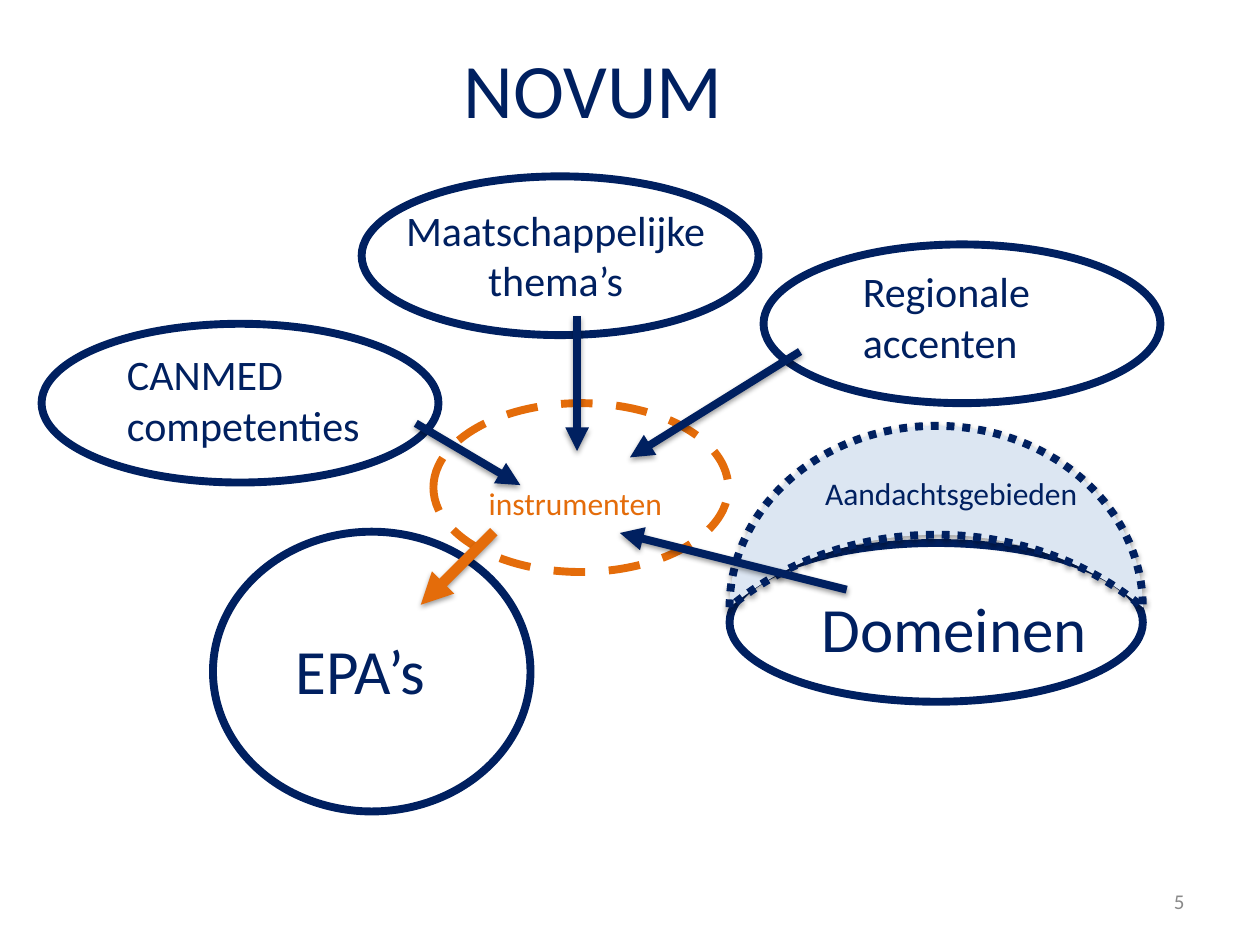
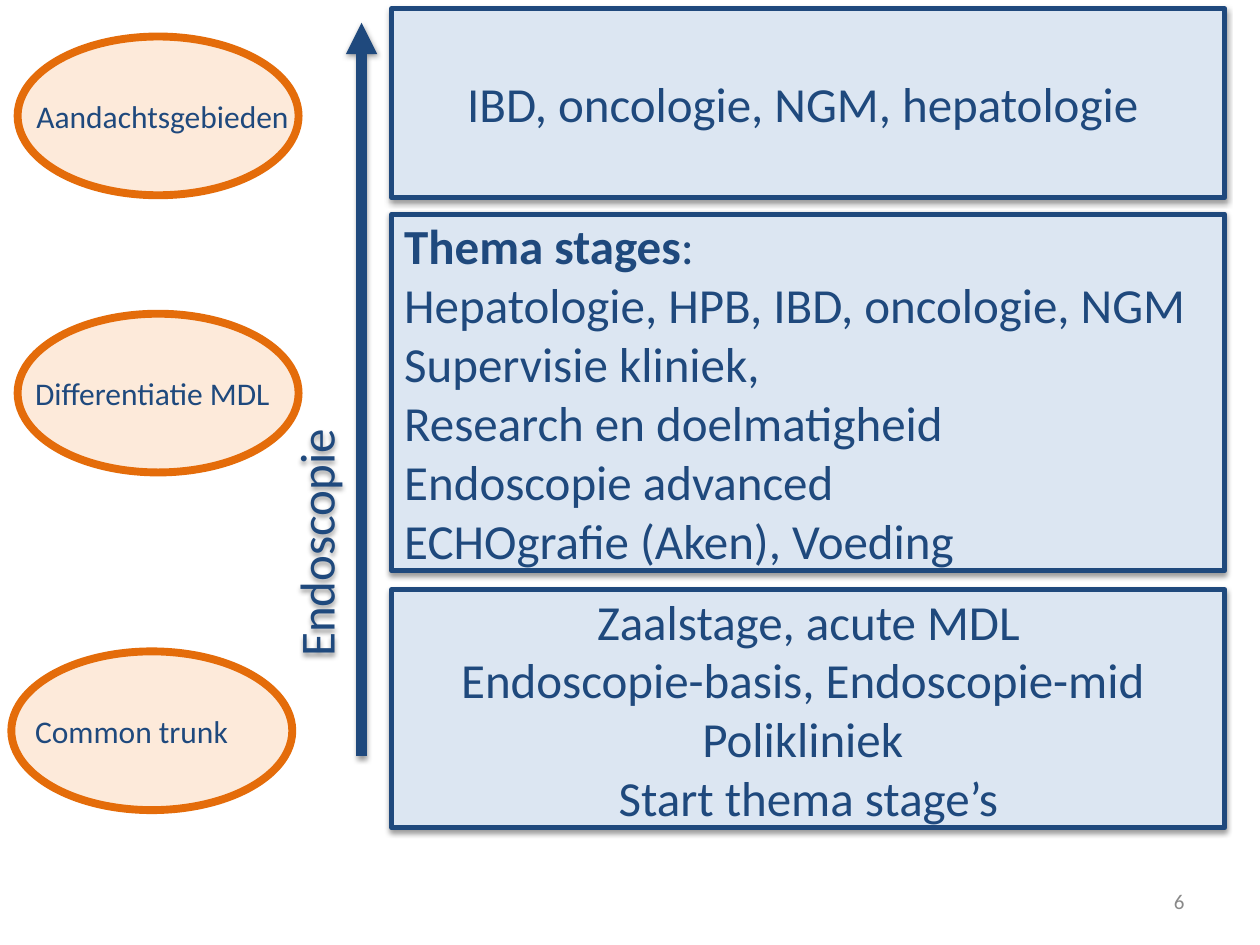
import pptx
import pptx.dml.color
import pptx.enum.dml
import pptx.enum.shapes
import pptx.enum.text
import pptx.oxml.ns
import pptx.util
from lxml import etree

Inches = pptx.util.Inches
Color = pptx.dml.color.RGBColor
Shape = pptx.enum.shapes.MSO_SHAPE
Dash = pptx.enum.dml.MSO_LINE
Align = pptx.enum.text.PP_ALIGN
Anchor = pptx.enum.text.MSO_ANCHOR
qn = pptx.oxml.ns.qn

NAVY = Color(0x00, 0x20, 0x60)
BLUE = Color(0x1F, 0x49, 0x7D)
PALE = Color(0xDC, 0xE6, 0xF2)
ORANGE = Color(0xE4, 0x6C, 0x0A)
PEACH = Color(0xFD, 0xEA, 0xDA)
GREY = Color(0x89, 0x89, 0x89)
FONT = "Calibri"


class Deck:
    """Holds the shared style and the current slide."""

    def __init__(self):
        self.prs = pptx.Presentation()
        self.prs.slide_width = Inches(10)
        self.prs.slide_height = Inches(7.5)
        self.slide = None

    def start(self, number, title=None):
        layout = self.prs.slide_layouts[5 if title else 6]
        self.slide = self.prs.slides.add_slide(layout)
        if title:
            head = self.slide.shapes.title
            self.place(head, (0.21, 0.07, 9, 1.25))
            self.words(head, [title], 44, NAVY, Align.CENTER, Anchor.MIDDLE)
        self.label((7.17, 6.95, 2.33, 0.4), [number], 12, GREY,
                   Align.RIGHT, Anchor.MIDDLE)

    def place(self, shape, box):
        for name, value in zip(("left", "top", "width", "height"), box):
            setattr(shape, name, Inches(value))

    def words(self, shape, lines, size, color, align=Align.LEFT,
              anchor=Anchor.TOP, wrap=True, bold=()):
        frame = shape.text_frame
        frame.word_wrap = wrap
        frame.vertical_anchor = anchor
        look = {"size": pptx.util.Pt(size), "name": FONT}
        for i, line in enumerate(lines):
            para = frame.paragraphs[0] if i == 0 else frame.add_paragraph()
            para.alignment = align
            # A line is a string or a list of runs
            for text in [line] if isinstance(line, str) else line:
                run = para.add_run()
                run.text = text
                for name, value in {**look, "bold": text in bold}.items():
                    setattr(run.font, name, value)
                run.font.color.rgb = color

    def label(self, box, lines, size, color, align=Align.LEFT,
              anchor=Anchor.TOP, wrap=True):
        shape = self.slide.shapes.add_textbox(*map(Inches, box))
        self.words(shape, lines, size, color, align, anchor, wrap)
        return shape

    def shape(self, kind, box, line, width=4.5, fill=None, dash=None):
        shape = self.slide.shapes.add_shape(kind, *map(Inches, box))
        shape.shadow.inherit = False
        if fill is None:
            shape.fill.background()
        else:
            shape.fill.solid()
            shape.fill.fore_color.rgb = fill
        shape.line.color.rgb = line
        shape.line.width = pptx.util.Pt(width)
        if dash:
            shape.line.dash_style = dash
        return shape

    def arrow(self, start, end, color=NAVY, width=4.5):
        line = self.slide.shapes.add_connector(
            pptx.enum.shapes.MSO_CONNECTOR.STRAIGHT,
            *map(Inches, start + end))
        line.line.color.rgb = color
        line.line.width = pptx.util.Pt(width)
        ln = line.element.spPr.find(qn("a:ln"))
        etree.SubElement(ln, qn("a:tailEnd"), type="triangle")
        self.shade(line)

    def shade(self, shape, alpha=38, dist=1.6):
        props = shape.element.spPr
        effects = props.find(qn("a:effectLst"))
        if effects is None:
            effects = etree.SubElement(props, qn("a:effectLst"))
        shadow = etree.SubElement(
            effects, qn("a:outerShdw"), blurRad=str(pptx.util.Pt(3.1)),
            dist=str(pptx.util.Pt(dist)), dir="5400000", rotWithShape="0")
        tint = etree.SubElement(shadow, qn("a:srgbClr"), val="000000")
        etree.SubElement(tint, qn("a:alpha"), val=str(alpha * 1000))

    def panel(self, top, height, lines, align=Align.CENTER, bold=()):
        box = self.shape(Shape.RECTANGLE, (3.11, top, 6.61, height),
                         BLUE, 3, PALE)
        self.shade(box)
        self.words(box, lines, 28, BLUE, align, Anchor.MIDDLE, bold=bold)
        return box


def novum(deck):
    deck.start("5", "NOVUM")

    # Ovals around the instruments
    for box in ((0.33, 2.57, 3.15, 1.26), (1.69, 4.22, 2.52, 2.22),
                (6.06, 1.94, 3.15, 1.26), (2.87, 1.4, 3.15, 1.26),
                (5.79, 4.31, 3.28, 1.26)):
        deck.shape(Shape.OVAL, box, NAVY)
    moon = deck.shape(Shape.MOON, (6.71, 2.46, 1.44, 3.28), NAVY,
                      fill=PALE, dash=Dash.ROUND_DOT)
    moon.rotation = 90
    moon.adjustments[0] = 0.6
    deck.shade(moon, 35, 1.8)
    deck.shape(Shape.OVAL, (3.44, 3.2, 2.34, 1.34), ORANGE, dash=Dash.DASH)

    # Arrows towards the centre
    for start, end in (((3.3, 3.36), (4.13, 3.85)),
                       ((4.58, 2.51), (4.58, 3.58)),
                       ((6.35, 2.79), (5, 3.63)),
                       ((6.72, 4.68), (4.92, 4.23))):
        deck.arrow(start, end)

    # Names
    for box, lines, size in (
            ((2.25, 4.96, 1.24, 0.71), ["EPA’s"], 36),
            ((0.91, 2.72, 2.07, 0.91), ["CANMED", "competenties"], 24),
            ((6.75, 2.06, 1.53, 0.91), ["Regionale", "accenten"], 24),
            ((6.42, 4.63, 2.33, 0.71), ["Domeinen"], 36),
            ((6.45, 3.71, 2.37, 0.4), ["Aandachtsgebieden"], 18)):
        deck.label(box, lines, size, NAVY, wrap=False)
    deck.label((3.12, 1.57, 2.58, 0.91), ["Maatschappelijke", "thema’s"],
               24, NAVY, Align.CENTER)

    # Result
    deck.arrow((3.92, 4.22), (3.34, 4.8), ORANGE, 6)
    deck.label((3.78, 3.79, 1.59, 0.4), ["instrumenten"], 18, ORANGE,
               wrap=False)


def stages(deck):
    deck.start("6")

    # Panels, from the first stage up
    trunk = deck.panel(4.68, 1.89, [
        "Zaalstage, acute MDL", "Endoscopie-basis, Endoscopie-mid ",
        "Polikliniek ", "Start thema stage’s"])
    props = trunk.text_frame.paragraphs[-1]._p.get_or_add_pPr()
    props.set("marL", "0")
    props.set("indent", str(Inches(-0.35)))
    deck.panel(1.7, 2.83, [
        ["Thema stages", ":"], "Hepatologie, HPB, IBD, oncologie, NGM",
        "Supervisie kliniek,", "Research en doelmatigheid",
        "Endoscopie advanced", "ECHOgrafie (Aken), Voeding"],
        Align.LEFT, ("Thema stages",))
    deck.panel(0.07, 1.5, ["IBD, oncologie, NGM, hepatologie "])

    # Rising arrow
    deck.arrow((2.87, 6), (2.87, 0.18), BLUE, 6)

    # Phases
    for left, top, inset, width, name in (
            (0.09, 5.17, 0.18, 1.81, "Common trunk"),
            (0.14, 2.49, 0.18, 2.21, "Differentiatie MDL"),
            (0.14, 0.29, 0.19, 2.31, "Aandachtsgebieden")):
        deck.shape(Shape.OVAL, (left, top, 2.23, 1.26), ORANGE, fill=PEACH)
        deck.label((inset, top + 0.43, width, 0.4), [name], 18, BLUE,
                   wrap=False)

    # Upright name beside the arrow
    side = deck.label((1.36, 4, 2.28, 0.53), ["Endoscopie "], 28, BLUE,
                      Align.CENTER, Anchor.MIDDLE)
    side.rotation = 270
    deck.shade(side)


def main():
    deck = Deck()
    novum(deck)
    stages(deck)
    deck.prs.save("out.pptx")


if __name__ == "__main__":
    main()
